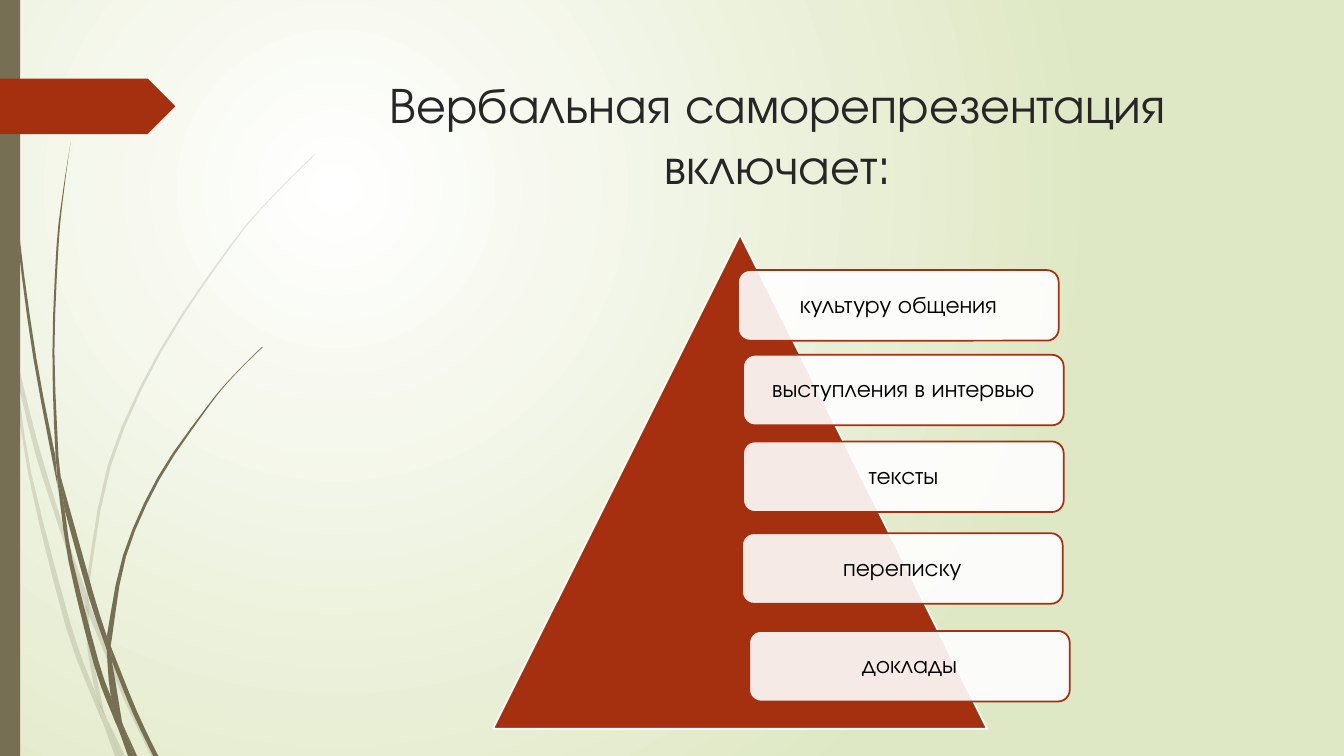
from dataclasses import dataclass

from lxml.etree import SubElement
from pptx import Presentation
from pptx.dml.color import RGBColor
from pptx.enum.shapes import MSO_SHAPE
from pptx.enum.text import MSO_ANCHOR, MSO_AUTO_SIZE, PP_ALIGN
from pptx.oxml import parse_xml
from pptx.oxml.ns import nsdecls, qn
from pptx.util import Inches, Pt


@dataclass(frozen=True)
class Theme:
    font: str = "TeX Gyre Adventor"
    title_size: float = 36
    label_size: float = 17
    title_color: str = "262626"
    label_color: str = "000000"
    accent: str = "A53010"
    stem: str = "766F54"
    light: str = "FFFFFF"
    meadow: str = "DFE8C4"
    outline: float = 1.25
    faint: int = 20
    veil: int = 90


FAINT_BLADES = [
    ([(0, 2.82), (0.09, 3.22), (0.11, 3.5)], [(0.1, 3.44), (0, 2.99)]),
    ([(0.14, 3.45), (0.36, 4.34), (0.62, 5.2), (0.85, 5.86)],
     [(0.84, 5.99), (0.58, 5.22), (0.35, 4.5), (0.17, 3.76)]),
    ([(0.88, 5.96), (0.92, 6.07), (1.27, 6.92), (1.55, 7.5)],
     [(1.5, 7.5), (1.23, 6.94), (0.88, 6.1)]),
    ([(1.05, 7.11), (1.24, 7.5)], [(1.19, 7.5), (1.05, 7.11)]),
    ([(0.11, 3.5), (0.17, 3.76), (0.31, 4.69), (0.7, 6.19), (0.93, 6.83)],
     [(0.99, 7.07), (1.01, 7.14), (0.92, 6.93), (0.65, 6.21), (0.28, 4.7), (0.11, 3.5)]),
    ([(0.84, 5.99), (0.88, 6.08), (0.91, 6.46), (1.03, 7.06)],
     [(1.05, 7.11), (0.96, 6.92), (0.87, 6.46), (0.84, 5.99)]),
    ([(3.12, 1.53), (2.68, 1.97), (2.28, 2.44), (1.58, 3.48), (1.07, 4.61), (0.85, 5.84)],
     [(0.88, 5.96), (0.88, 5.84), (1.1, 4.62), (1.6, 3.49), (2.29, 2.45),
      (2.68, 1.98), (3.12, 1.54)]),
    ([(1.01, 7.14), (1.19, 7.5)], [(1.14, 7.5), (1.01, 7.14)]),
    ([(0.85, 5.86), (0.88, 5.96), (0.88, 6.1)], [(0.84, 5.99), (0.85, 5.86)]),
    ([(0.93, 6.83), (0.96, 6.92), (1.05, 7.11), (1.19, 7.5)],
     [(1.01, 7.14), (0.99, 7.07), (0.93, 6.83)]),
]
DARK_BLADES = [
    ([(0.04, 0), (0.05, 0.48), (0.08, 1.09), (0.19, 2.32), (0.36, 3.55), (0.55, 4.53)],
     [(0.57, 4.81), (0.56, 4.77), (0.33, 3.55), (0.17, 2.33), (0.07, 1.1),
      (0.04, 0.48), (0.03, 0)]),
    ([(0.6, 4.72), (0.93, 5.9), (1.06, 6.31)],
     [(1.06, 6.45), (0.88, 5.92), (0.64, 5.05)]),
    ([(1.1, 6.41), (1.13, 6.49), (1.36, 7.06), (1.57, 7.5)],
     [(1.52, 7.5), (1.32, 7.08), (1.11, 6.56)]),
    ([(0.57, 4.77), (0.64, 5.05), (0.72, 5.56), (0.98, 6.57), (1.1, 6.91)],
     [(1.16, 7.17), (1.17, 7.22), (1.11, 7.08), (0.93, 6.59), (0.68, 5.57), (0.57, 4.77)]),
    ([(0.7, 1.41), (0.62, 1.93), (0.56, 2.45), (0.52, 3.49), (0.55, 4.49), (0.6, 4.72)],
     [(0.58, 4.53), (0.54, 3.49), (0.58, 2.45), (0.63, 1.93), (0.7, 1.41)]),
    ([(1.22, 7.19), (1.36, 7.5)], [(1.33, 7.5), (1.22, 7.19)]),
    ([(0.55, 4.49), (0.6, 4.72), (0.64, 5.05)], [(0.57, 4.77), (0.55, 4.49)]),
    ([(2.6, 3.44), (2.31, 3.73), (2.04, 4.05), (1.56, 4.74), (1.22, 5.51), (1.06, 6.31)],
     [(1.1, 6.41), (1.11, 6.33), (1.25, 5.52), (1.58, 4.76), (2.05, 4.06),
      (2.31, 3.74), (2.61, 3.44)]),
    ([(1.17, 7.22), (1.31, 7.5)], [(1.27, 7.5), (1.17, 7.22)]),
    ([(1.06, 6.45), (1.11, 6.56), (1.21, 7.16)],
     [(1.22, 7.19), (1.1, 6.91), (1.06, 6.45)]),
    ([(1.06, 6.31), (1.1, 6.41), (1.11, 6.56)], [(1.06, 6.45), (1.06, 6.31)]),
    ([(1.1, 6.91), (1.22, 7.19), (1.33, 7.5)], [(1.3, 7.5), (1.17, 7.22), (1.1, 6.91)]),
]
LABELS = [
    ("доклады", 7.43, 6.26),
    ("культуру общения", 7.32, 2.68),
    ("переписку", 7.36, 5.29),
    ("выступления в интервью", 7.37, 3.52),
    ("тексты", 7.37, 4.38),
]
UNITS_PER_INCH = 1000


def smooth(knots, steps=3):
    padded = [knots[0], *knots, knots[-1]]
    curve = []
    for before, start, end, after in zip(padded, padded[1:], padded[2:], padded[3:]):
        for step in range(steps):
            t = step / steps
            curve.append(tuple(
                b + (c - a) * t / 2 + (a - 2.5 * b + 2 * c - d / 2) * t ** 2
                + (3 * (b - c) + d - a) * t ** 3 / 2
                for a, b, c, d in zip(before, start, end, after)))
    return curve + [knots[-1]]


class SlideBuilder:
    def __init__(self, slide, theme):
        self.slide = slide
        self.theme = theme

    def background(self):
        fill = self.slide.background.fill
        fill.gradient()
        colors = (self.theme.light, self.theme.meadow)
        for stop, color, position in zip(fill.gradient_stops, colors, (0, 1)):
            stop.color.rgb = RGBColor.from_string(color)
            stop.position = position
        gradient = next(self.slide.element.iter(qn("a:gradFill")))
        gradient.remove(gradient.find(qn("a:lin")))
        gradient.find(qn("a:gsLst")).addnext(parse_xml(
            f'<a:path {nsdecls("a")} path="circle"><a:fillToRect l="50000" '
            't="50000" r="100000" b="100000"/></a:path>'))

    def style(self, shape, fill, line=None, opacity=100):
        shape.shadow.inherit = False
        shape.fill.solid()
        shape.fill.fore_color.rgb = RGBColor.from_string(fill)
        if opacity < 100:
            color = next(shape.element.spPr.iter(qn("a:srgbClr")))
            SubElement(color, qn("a:alpha")).set("val", str(opacity * 1000))
        if line:
            shape.line.color.rgb = RGBColor.from_string(line)
            shape.line.width = Pt(self.theme.outline)
        else:
            shape.line.fill.background()

    def shape(self, kind, left, top, width, height, fill, line=None, opacity=100):
        shape = self.slide.shapes.add_shape(
            kind, Inches(left), Inches(top), Inches(width), Inches(height))
        self.style(shape, fill, line, opacity)
        return shape

    def blade(self, edges, opacity=100):
        points = [(x * UNITS_PER_INCH, y * UNITS_PER_INCH)
                  for edge in edges for x, y in smooth(edge)]
        builder = self.slide.shapes.build_freeform(
            *points[0], scale=Inches(1) / UNITS_PER_INCH)
        builder.add_line_segments(points[1:], close=True)
        self.style(builder.convert_to_shape(), self.theme.stem, opacity=opacity)

    def text(self, frame, text, size, color, anchor):
        frame.word_wrap = True
        frame.auto_size = MSO_AUTO_SIZE.NONE
        frame.vertical_anchor = anchor
        paragraph = frame.paragraphs[0]
        paragraph.alignment = PP_ALIGN.CENTER
        run = paragraph.add_run()
        run.text = text
        run.font.name = self.theme.font
        run.font.size = Pt(size)
        run.font.color.rgb = RGBColor.from_string(color)
        return paragraph

    def title(self, text, left, top, width, height):
        title = self.slide.shapes.title
        title.left, title.top = Inches(left), Inches(top)
        title.width, title.height = Inches(width), Inches(height)
        self.text(title.text_frame, text, self.theme.title_size,
                  self.theme.title_color, MSO_ANCHOR.TOP)

    def label(self, text, left, top):
        box = self.shape(MSO_SHAPE.ROUNDED_RECTANGLE, left, top, 3.18, 0.7,
                         self.theme.light, self.theme.accent, self.theme.veil)
        paragraph = self.text(box.text_frame, text, self.theme.label_size,
                              self.theme.label_color, MSO_ANCHOR.MIDDLE)
        paragraph.line_spacing = 0.9


def main():
    presentation = Presentation()
    presentation.slide_width = Inches(13.33)
    presentation.slide_height = Inches(7.5)
    theme = Theme()
    slide = presentation.slides.add_slide(presentation.slide_layouts[5])
    builder = SlideBuilder(slide, theme)
    builder.background()
    for edges in FAINT_BLADES:
        builder.blade(edges, theme.faint)
    for edges in DARK_BLADES:
        builder.blade(edges)
    builder.shape(MSO_SHAPE.RECTANGLE, 0, 0, 0.2, 7.5, theme.stem)
    builder.shape(MSO_SHAPE.PENTAGON, 0, 0.78, 1.74, 0.55, theme.accent)
    builder.title("Вербальная саморепрезентация включает:", 2.84, 0.68, 9.75, 1.4)
    builder.shape(MSO_SHAPE.ISOSCELES_TRIANGLE, 4.89, 2.33, 4.9, 4.9,
                  theme.accent, theme.light)
    for text, left, top in LABELS:
        builder.label(text, left, top)
    presentation.save("out.pptx")


if __name__ == "__main__":
    main()
